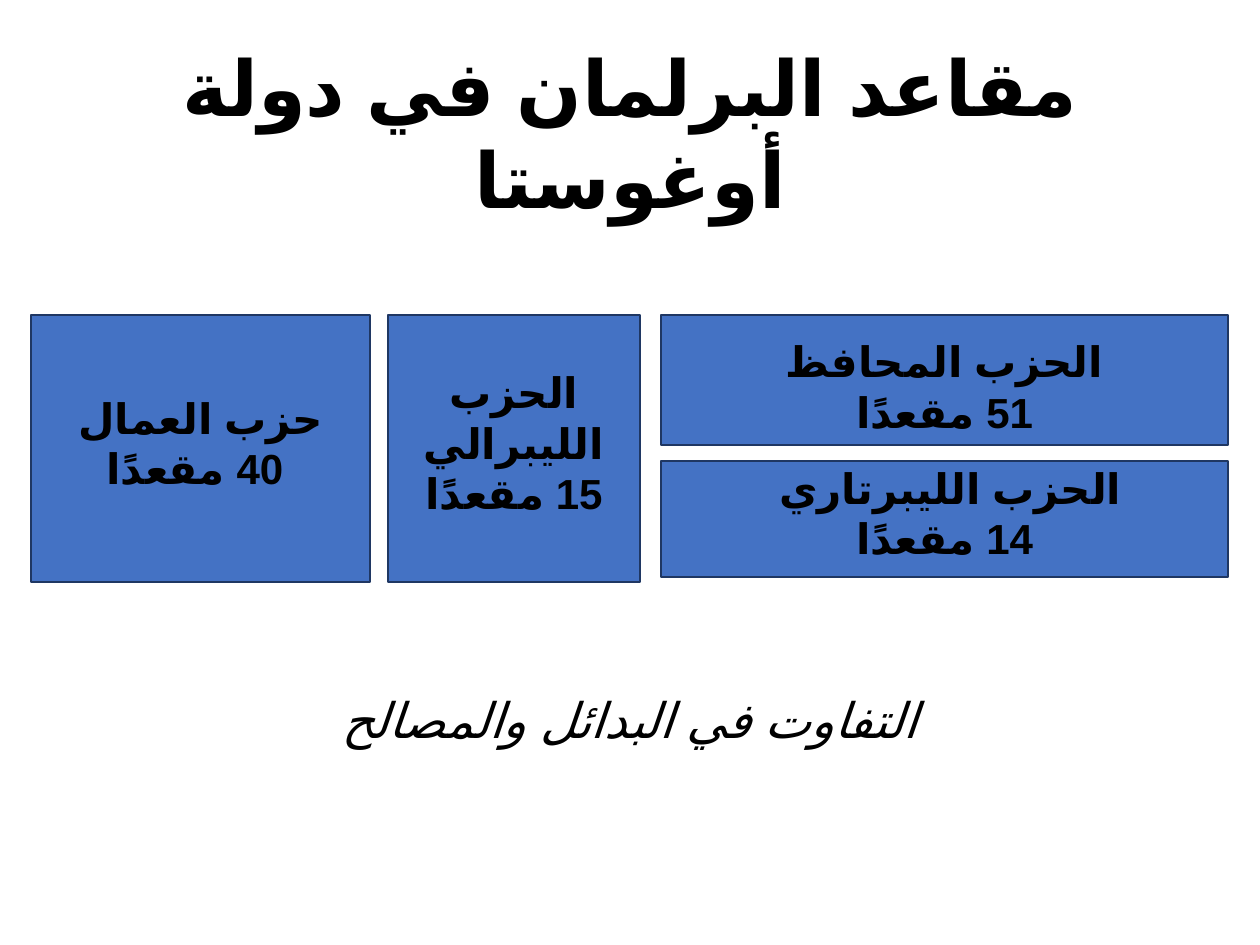
"""Build a slide showing how many seats each party holds in a parliament."""
from lxml.etree import SubElement
from pptx import Presentation
from pptx.dml.color import RGBColor
from pptx.enum.shapes import MSO_SHAPE as Preset
from pptx.enum.text import MSO_ANCHOR as Anchor, PP_ALIGN as Align
from pptx.oxml.ns import qn
from pptx.util import Emu, Pt

PX = 914400 / 126
FONT = "Calibri"
ARABIC_FONT = "Arial"
COLORS = {"text": "000000", "party": "4472C4", "border": "1F3763"}


def px(value):
    return Emu(round(value * PX))


def color(name):
    return RGBColor.from_string(COLORS[name])


def write(paragraph, text, size=24, bold=False, italic=False):
    paragraph.alignment = Align.CENTER
    paragraph._p.get_or_add_pPr().set("rtl", "1")
    run = paragraph.add_run()
    run.text = text
    font = run.font
    font.name, font.size = FONT, Pt(size)
    font.bold, font.italic = bold, italic
    font.color.rgb = color("text")
    properties = run._r.get_or_add_rPr()
    properties.set("lang", "ar")
    SubElement(properties, qn("a:cs")).set("typeface", ARABIC_FONT)


class SeatSlide:
    def __init__(self, presentation):
        self.slide = presentation.slides.add_slide(presentation.slide_layouts[6])

    def fill_frame(self, shape, lines, **style):
        frame = shape.text_frame
        frame.word_wrap = True
        frame.vertical_anchor = Anchor.MIDDLE
        for index, line in enumerate(lines):
            paragraph = frame.add_paragraph() if index else frame.paragraphs[0]
            write(paragraph, line, **style)
        return frame

    def heading(self, text, top, **style):
        box = self.slide.shapes.add_textbox(px(63), px(top), px(1134), px(157))
        self.fill_frame(box, [text], **style)

    def party(self, lines, left, top, width, height, shift=-6):
        shape = self.slide.shapes.add_shape(
            Preset.RECTANGLE, px(left), px(top), px(width), px(height))
        shape.shadow.inherit = False
        shape.fill.solid()
        shape.fill.fore_color.rgb = color("party")
        shape.line.color.rgb = color("border")
        shape.line.width = Pt(1)
        frame = self.fill_frame(shape, lines, bold=True)
        frame.margin_top, frame.margin_bottom = px(7 + shift), px(7 - shift)


def main():
    presentation = Presentation()
    presentation.slide_width, presentation.slide_height = px(1260), px(945)
    seats = SeatSlide(presentation)
    seats.party(["حزب العمال", " 40 مقعدًا"], 31, 315, 339, 267)
    seats.party(["الحزب الليبرالي", "15 مقعدًا"], 388, 315, 252, 267)
    seats.party(["الحزب المحافظ", "51 مقعدًا"], 661, 315, 567, 130, shift=6)
    seats.party(["الحزب الليبرتاري ", "14 مقعدًا"], 661, 461, 567, 116)
    seats.heading("مقاعد البرلمان في دولة أوغوستا", 53, size=44, bold=True)
    seats.heading("التفاوت في البدائل والمصالح", 640, size=28, italic=True)
    presentation.save("out.pptx")


if __name__ == "__main__":
    main()
